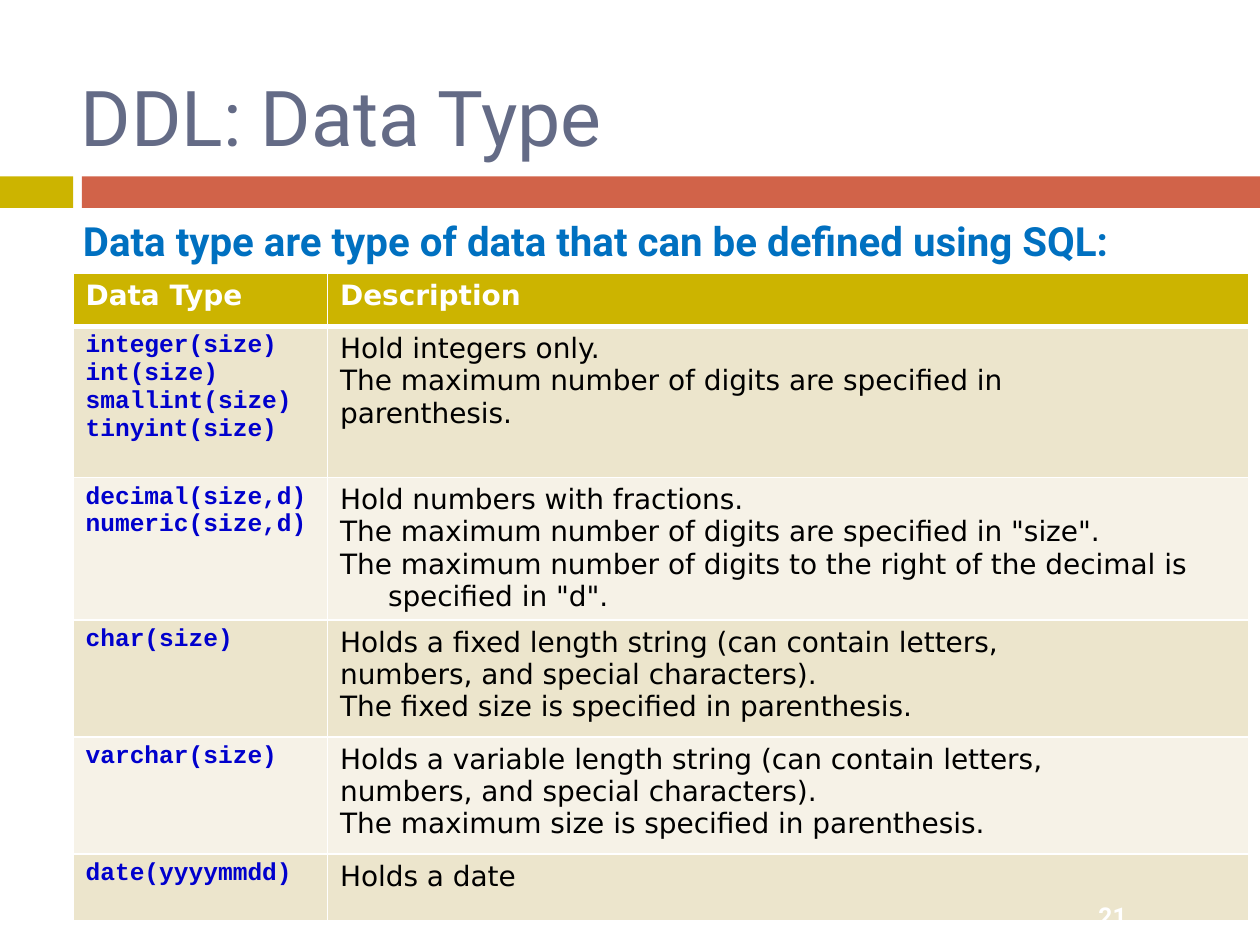
from dataclasses import dataclass
from lxml.etree import SubElement as Sub
from pptx import Presentation
from pptx.dml.color import RGBColor as RGB
from pptx.enum.shapes import MSO_SHAPE as Kind
from pptx.enum.text import MSO_ANCHOR as Anchor, MSO_AUTO_SIZE as Fit, PP_ALIGN as Align
from pptx.oxml.ns import qn
from pptx.util import Inches, Pt


@dataclass(frozen=True)
class Font:
    name: str
    size: int
    color: str
    bold: bool = False


@dataclass(frozen=True)
class Theme:
    gold: str = "CCB400"
    red: str = "D16349"
    line: str = "FFFFFF"
    bands: tuple = ("F6F2E7", "ECE5CC")
    title: Font = Font("Roboto", 44, "646B86")
    lead: Font = Font("Roboto", 23, "0070C0", True)
    number: Font = Font("Roboto", 14, "FFFFFF", True)
    head: Font = Font("DejaVu Sans", 16, "FFFFFF", True)
    code: Font = Font("Courier New", 14, "0000CC", True)
    text: Font = Font("DejaVu Sans", 16, "000000")


class Page:
    def __init__(self, deck, theme):
        self.theme = theme
        self.slide = deck.slides.add_slide(deck.slide_layouts[5])

    def box(self, *sizes):
        return [Inches(size) for size in sizes]

    def put(self, frame, text, font, hang=False):
        frame.text = text
        for para in frame.paragraphs:
            para.alignment = Align.LEFT
            if hang:
                props = para._p.get_or_add_pPr()
                props.set("marL", str(Inches(0.38)))
                props.set("indent", str(Inches(-0.38)))
            for run in para.runs:
                run.font.name = font.name
                run.font.size = Pt(font.size)
                run.font.bold = font.bold
                run.font.color.rgb = RGB.from_string(font.color)

    def title(self, text, *place):
        shape = self.slide.shapes.title
        shape.left, shape.top, shape.width, shape.height = self.box(*place)
        frame = shape.text_frame
        frame.auto_size = Fit.NONE
        frame.vertical_anchor = Anchor.MIDDLE
        self.put(frame, text, self.theme.title)

    def bar(self, color, *place):
        shape = self.slide.shapes.add_shape(Kind.RECTANGLE, *self.box(*place))
        shape.shadow.inherit = False
        shape.fill.solid()
        shape.fill.fore_color.rgb = RGB.from_string(color)
        shape.line.fill.background()

    def label(self, text, font, *place, hang=False, before=0):
        frame = self.slide.shapes.add_textbox(*self.box(*place)).text_frame
        frame.word_wrap = True
        self.put(frame, text, font, hang)
        frame.paragraphs[0].space_before = Pt(before)

    def edge(self, cell, side, width):
        line = Sub(cell._tc.get_or_add_tcPr(), qn("a:ln" + side), w=str(Pt(width)))
        fill = Sub(line, qn("a:solidFill"))
        Sub(fill, qn("a:srgbClr"), val=self.theme.line)

    def table(self, rows, left, top, widths, heights):
        place = self.box(left, top, sum(widths), sum(heights))
        grid = self.slide.shapes.add_table(len(rows), len(widths), *place).table
        for col, width in zip(grid.columns, widths):
            col.width = Inches(width)
        for row, height in zip(grid.rows, heights):
            row.height = Inches(height)
        for i, row in enumerate(rows):
            fonts = (self.theme.code, self.theme.text) if i else (self.theme.head,) * 2
            color = self.theme.bands[i % 2] if i else self.theme.gold
            for j, (text, font) in enumerate(zip(row, fonts)):
                cell = grid.cell(i, j)
                self.put(cell.text_frame, text, font, hang=True)
                for side in "LRTB":
                    thick = (i, side) in ((0, "B"), (1, "T"))
                    self.edge(cell, side, 3 if thick else 1)
                cell.fill.solid()
                cell.fill.fore_color.rgb = RGB.from_string(color)


ROWS = [
    ("Data Type", "Description"),
    ("integer(size)\nint(size)\nsmallint(size)\ntinyint(size)",
     "Hold integers only.\n"
     "The maximum number of digits are specified in\nparenthesis."),
    ("decimal(size,d)\nnumeric(size,d)",
     "Hold numbers with fractions.\n"
     'The maximum number of digits are specified in "size".\n'
     "The maximum number of digits to the right of the decimal is "
     'specified in "d".'),
    ("char(size)",
     "Holds a fixed length string (can contain letters,\n"
     "numbers, and special characters).\n"
     "The fixed size is specified in parenthesis."),
    ("varchar(size)",
     "Holds a variable length string (can contain letters,\n"
     "numbers, and special characters).\n"
     "The maximum size is specified in parenthesis."),
    ("date(yyyymmdd)", "Holds a date"),
]


def main():
    deck = Presentation()
    deck.slide_width, deck.slide_height = Inches(10), Inches(7.5)
    theme = Theme()
    page = Page(deck, theme)
    page.bar(theme.gold, 0, 1.4, 0.58, 0.25)
    page.bar(theme.red, 0.65, 1.4, 9.35, 0.25)
    page.table(ROWS, 0.58, 2.17, (2.02, 7.31), (0.42, 1.2, 1.13, 0.93, 0.93, 0.53))
    page.label("Data type are type of data that can be defined using SQL:",
               theme.lead, 0.56, 1.67, 9.67, 0.49, hang=True, before=4.6)
    page.label("21", theme.number, 8.62, 7.1, 0.5, 0.33)
    page.title("DDL: Data Type", 0.54, 0.58, 9, 0.67)
    deck.save("out.pptx")


if __name__ == "__main__":
    main()
